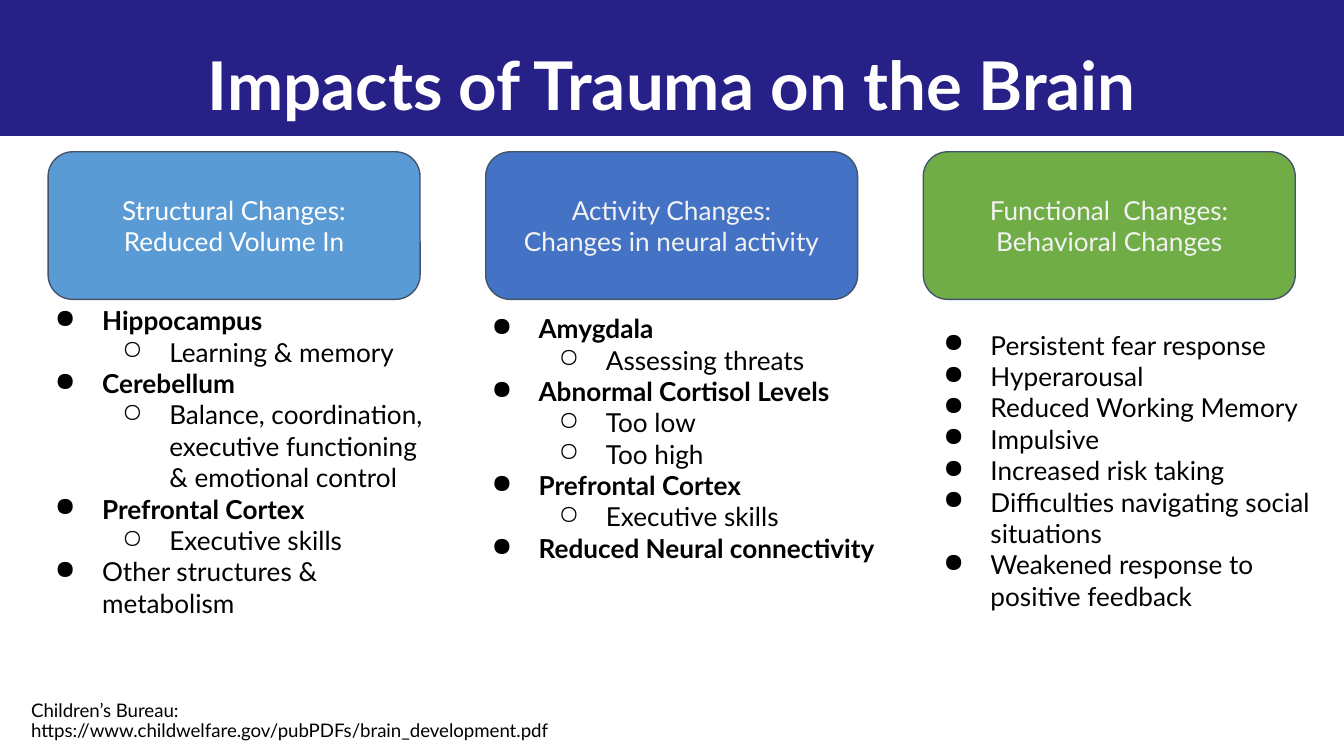
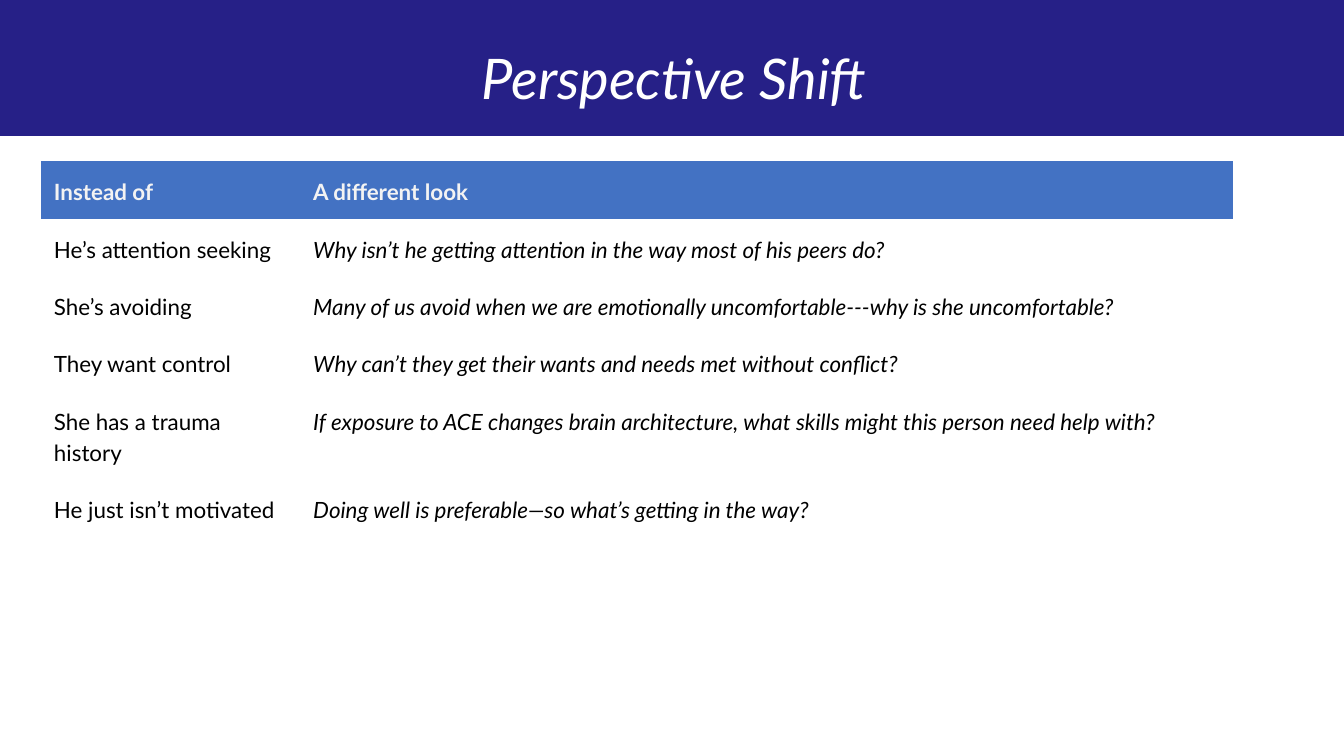
"""Build two slides on the effects of trauma: brain impacts and a shift of perspective."""
from dataclasses import dataclass

from lxml import etree
from pptx import Presentation
from pptx.dml.color import RGBColor
from pptx.enum.shapes import MSO_SHAPE
from pptx.enum.text import MSO_ANCHOR, PP_ALIGN
from pptx.oxml.ns import qn
from pptx.util import Cm, Pt

RECTANGLE, ROUNDED = MSO_SHAPE.RECTANGLE, MSO_SHAPE.ROUNDED_RECTANGLE
TOP, MIDDLE, BOTTOM = MSO_ANCHOR.TOP, MSO_ANCHOR.MIDDLE, MSO_ANCHOR.BOTTOM
LEFT, CENTER = PP_ALIGN.LEFT, PP_ALIGN.CENTER
PLAIN_TABLE = "{2D5ABB26-0587-4C30-8999-92F81FD0307C}"


@dataclass(frozen=True)
class Theme:
    font: str = "Lato"
    band: str = "262087"
    white: str = "FFFFFF"
    pale: str = "F3F3F3"
    text: str = "000000"
    outline: str = "44546A"
    sky: str = "5B9BD5"
    blue: str = "4472C4"
    green: str = "70AD47"
    table_head: str = "4372C3"
    title_size: int = 36
    subtitle_size: int = 30
    body_size: int = 14
    table_size: int = 12
    source_size: int = 10


theme = Theme()


def style_paragraph(paragraph, text, size, color, align=LEFT, bold=False, italic=False):
    paragraph.text = text
    paragraph.alignment = align
    font = paragraph.font
    font.name, font.size = theme.font, Pt(size)
    font.bold, font.italic = bold, italic
    font.color.rgb = RGBColor.from_string(color)


def add_text_box(slide, left, top, width, height, anchor, margin_x=0.25, margin_y=0.25):
    frame = slide.shapes.add_textbox(Cm(left), Cm(top), Cm(width), Cm(height)).text_frame
    frame.word_wrap = True
    frame.vertical_anchor = anchor
    frame.margin_left = frame.margin_right = Cm(margin_x)
    frame.margin_top = frame.margin_bottom = Cm(margin_y)
    return frame


presentation = Presentation()
presentation.slide_width, presentation.slide_height = Cm(25.4), Cm(14.29)

titles = [
    ("Impacts of Trauma on the Brain", theme.title_size, True, (0, 0.3, 25.4, 2.57)),
    ("Perspective Shift", theme.subtitle_size, False, (0.08, 0.46, 25.32, 2)),
]
slides = []
for title, size, bold, place in titles:
    slide = presentation.slides.add_slide(presentation.slide_layouts[6])
    band = slide.shapes.add_shape(RECTANGLE, 0, 0, presentation.slide_width, Cm(2.57))
    band.shadow.inherit = False
    band.fill.solid()
    band.fill.fore_color.rgb = RGBColor.from_string(theme.band)
    band.line.fill.background()
    frame = add_text_box(slide, *place, MIDDLE)
    style_paragraph(frame.paragraphs[0], title, size, theme.white, CENTER, bold, not bold)
    slides.append(slide)
impacts, perspective = slides

columns = [
    (theme.sky, theme.white, ["Structural Changes:", "Reduced Volume In"], (0.41, 5.51, 8.05), [
        ("Hippocampus", 0, True),
        ("Learning & memory", 1, False),
        ("Cerebellum", 0, True),
        ("Balance, coordination, executive functioning & emotional control", 1, False),
        ("Prefrontal Cortex", 0, True),
        ("Executive skills", 1, False),
        ("Other structures & metabolism", 0, False),
    ]),
    (theme.blue, theme.pale, ["Activity Changes:", "Changes in neural activity"], (8.66, 5.66, 8.31), [
        ("Amygdala", 0, True),
        ("Assessing threats", 1, False),
        ("Abnormal Cortisol Levels", 0, True),
        ("Too low", 1, False),
        ("Too high", 1, False),
        ("Prefrontal Cortex", 0, True),
        ("Executive skills", 1, False),
        ("Reduced Neural connectivity", 0, True),
    ]),
    (theme.green, theme.pale, ["Functional  Changes:", "Behavioral Changes"], (17.2, 5.97, 8.2), [
        ("Persistent fear response", 0, False),
        ("Hyperarousal", 0, False),
        ("Reduced Working Memory", 0, False),
        ("Impulsive", 0, False),
        ("Increased risk taking", 0, False),
        ("Difficulties navigating social situations", 0, False),
        ("Weakened response to positive feedback", 0, False),
    ]),
]
for index, (fill, color, heading, (left, top, width), items) in enumerate(columns):
    card = impacts.shapes.add_shape(ROUNDED, Cm(0.91 + 8.27 * index), Cm(2.87), Cm(7.03), Cm(2.79))
    card.shadow.inherit = False
    card.fill.solid()
    card.fill.fore_color.rgb = RGBColor.from_string(fill)
    card.line.color.rgb = RGBColor.from_string(theme.outline)
    card.line.width = Pt(0.75)
    frame = card.text_frame
    frame.vertical_anchor = MIDDLE
    for number, line in enumerate(heading):
        paragraph = frame.add_paragraph() if number else frame.paragraphs[0]
        style_paragraph(paragraph, line, theme.body_size, color, CENTER)

    frame = add_text_box(impacts, left, top, width, 5, TOP)
    for number, (item, level, bold) in enumerate(items):
        paragraph = frame.add_paragraph() if number else frame.paragraphs[0]
        paragraph.level = level
        properties = paragraph._p.get_or_add_pPr()
        properties.set("marL", str(Cm(1.27 * (level + 1))))
        properties.set("indent", str(Cm(-0.89)))
        bullet_color = etree.SubElement(properties, qn("a:buClr"))
        etree.SubElement(bullet_color, qn("a:srgbClr"), val=theme.text)
        etree.SubElement(properties, qn("a:buChar"), char="●○"[level])
        style_paragraph(paragraph, item, theme.body_size, theme.text, bold=bold)

frame = add_text_box(impacts, 0.41, 12.67, 12.34, 1.45, BOTTOM, 0.18, 0.1)
source = "Children’s Bureau: https://www.childwelfare.gov/pubPDFs/brain_development.pdf"
style_paragraph(frame.paragraphs[0], source, theme.source_size, theme.text)
frame.paragraphs[0].line_spacing = 0.9

rows = [
    ("Instead of", "A different look"),
    ("He’s attention seeking", "Why isn’t he getting attention in the way most of his peers do?"),
    ("She’s avoiding",
     "Many of us avoid when we are emotionally uncomfortable---why is she uncomfortable?"),
    ("They want control", "Why can’t they get their wants and needs met without conflict?"),
    ("She has a trauma history",
     "If exposure to ACE changes brain architecture, what skills might this person need help with?"),
    ("He just isn’t motivated", "Doing well is preferable—so what’s getting in the way?"),
]
column_widths = [4.9, 17.63]
table_shape = perspective.shapes.add_table(
    len(rows), len(column_widths), Cm(0.77), Cm(3.05), Cm(sum(column_widths)), Cm(0.9 * len(rows)))
for style in table_shape.element.iter(qn("a:tableStyleId")):
    style.text = PLAIN_TABLE
table = table_shape.table
table.horz_banding = False
for column, width in zip(table.columns, column_widths):
    column.width = Cm(width)
for row_index, row in enumerate(rows):
    is_head = row_index == 0
    for column_index, text in enumerate(row):
        cell = table.cell(row_index, column_index)
        cell.margin_left = cell.margin_right = cell.margin_top = cell.margin_bottom = Cm(0.25)
        if is_head:
            cell.fill.solid()
            cell.fill.fore_color.rgb = RGBColor.from_string(theme.table_head)
        else:
            cell.fill.background()
        paragraph = cell.text_frame.paragraphs[0]
        style_paragraph(paragraph, text, theme.table_size, theme.pale if is_head else theme.text,
                        bold=is_head, italic=column_index == 1 and not is_head)
        paragraph.line_spacing = 1.15

presentation.save("out.pptx")
